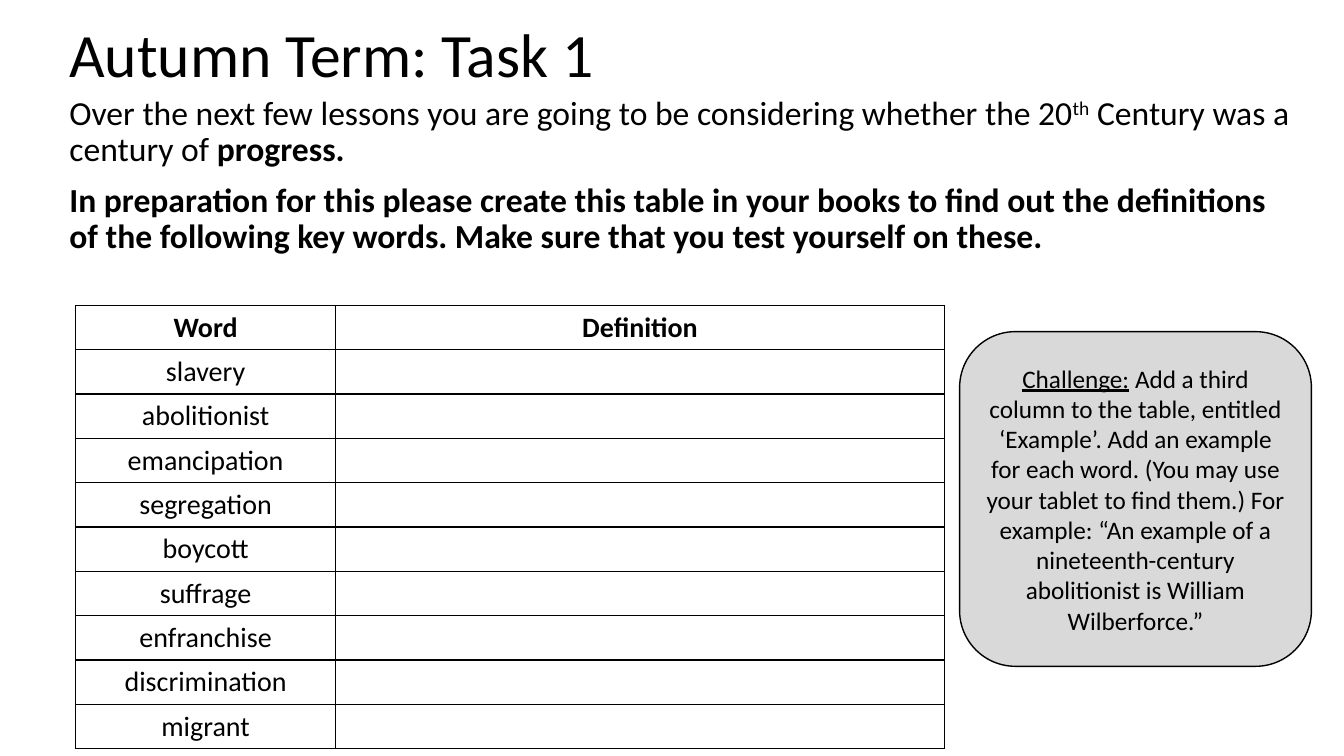
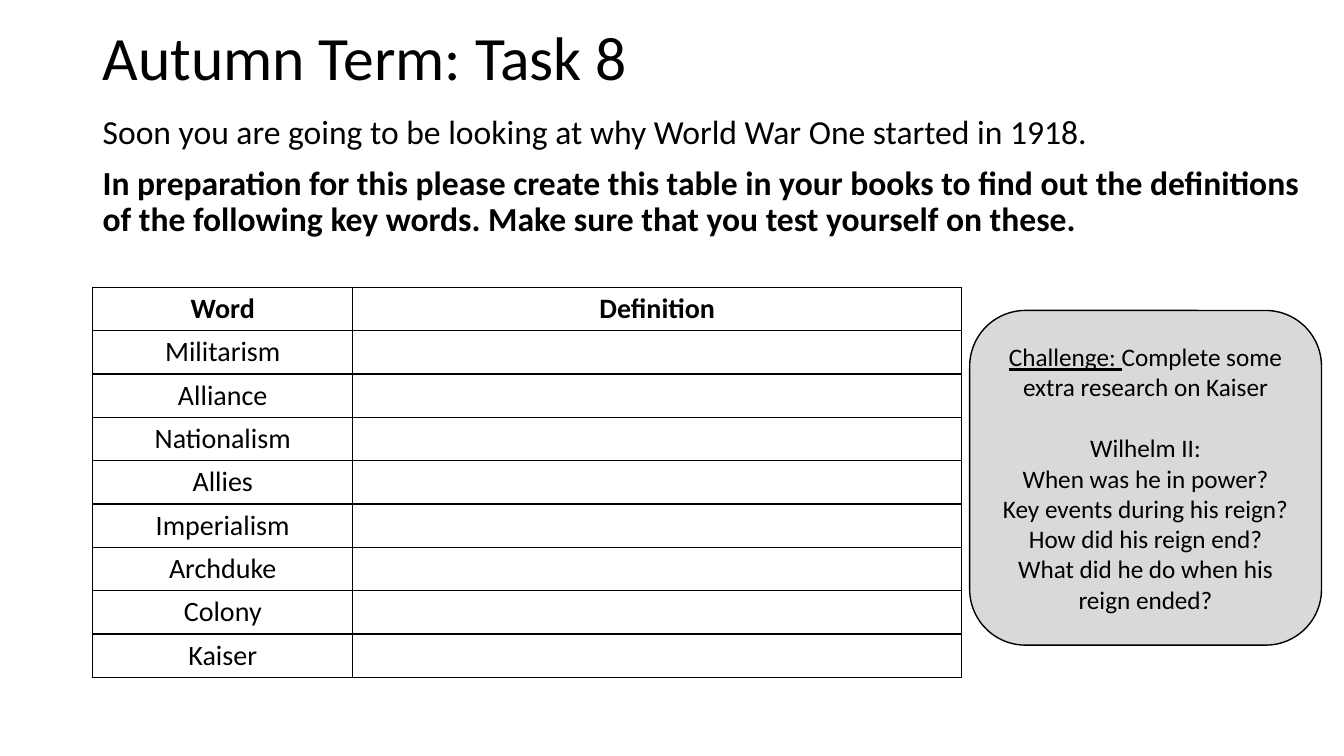
from lxml.etree import SubElement as Sub
from pptx import Presentation
from pptx.dml.color import RGBColor as Rgb
from pptx.enum.shapes import MSO_SHAPE as Shape
from pptx.enum.text import MSO_ANCHOR as Anchor, PP_ALIGN as Align
from pptx.oxml.ns import qn
from pptx.util import Emu, Inches, Pt

# Shared style
INK = {"text": "000000", "line": "000000", "card": "D9D9D9"}
FONT = "Calibri"
HEAD = ["Word", "Definition"]
COLS = [2.58, 6.04]
TASK = ("In preparation for this please create this table in your books to find "
        "out the definitions of the following key words. Make sure that you "
        "test yourself on these.")

# Content: a paragraph is a list of (text, marks) runs
# Marks: b = bold, u = underline, ^ = superscript
TASKS = [
    dict(
        title="Autumn Term: Task 1", title_at=(0.59, 0.05, 11.5, 1.05),
        intro=[("Over the next few lessons you are going to be considering "
                "whether the 20", ""), ("th", "^"),
               (" Century was a century of ", ""), ("progress.", "b")],
        intro_at=(0.59, 0.91, 12.42, 1.7),
        words=["slavery", "abolitionist", "emancipation", "segregation", "boycott",
               "suffrage", "enfranchise", "discrimination", "migrant"],
        grid_at=(0.75, 3.03), row=0.44,
        card=[[("Challenge:", "u"),
               (" Add a third column to the table, entitled ‘Example’. Add an "
                "example for each word. (You may use your tablet to find them.) "
                "For example: “An example of a nineteenth-century abolitionist "
                "is William Wilberforce.”", "")]],
        card_at=(9.52, 3.29, 3.49, 3.32), gaps={},
    ),
    dict(
        title="Autumn Term: Task 8", title_at=(0.92, 0.08, 11.5, 1.05),
        intro=[("Soon you are going to be looking at why World War One "
                "started in 1918.", "")],
        intro_at=(0.92, 1.1, 12.1, 1.33),
        words=["Militarism", "Alliance", "Nationalism", "Allies", "Imperialism",
               "Archduke", "Colony", "Kaiser"],
        grid_at=(0.92, 2.85), row=0.43,
        card=[[("Challenge: ", "u"), ("Complete some extra research on Kaiser", "")],
              [("Wilhelm II:", "")],
              [("When was he in power?", "")],
              [("Key events during his reign?", "")],
              [("How did his reign end?", "")],
              [("What did he do when his reign ended?", "")]],
        card_at=(9.62, 3.08, 3.49, 3.32), gaps={1: 22},
    ),
]


def add_run(para, text, size, marks=""):
    run = para.add_run()
    run.text = text
    font = run.font
    font.name, font.size = FONT, Pt(size)
    font.color.rgb = Rgb.from_string(INK["text"])
    font.bold = "b" in marks
    font.underline = "u" in marks
    if "^" in marks:
        run._r.get_or_add_rPr().set("baseline", "30000")


def fill_text(frame, paras, size, align=Align.LEFT, space=None, gaps=None):
    """Write paragraphs; gaps maps a paragraph's index to its space before."""
    frame.word_wrap = True
    for i, runs in enumerate(paras):
        para = frame.add_paragraph() if i else frame.paragraphs[0]
        para.alignment = align
        para.line_spacing = space
        if gaps and i in gaps:
            para.space_before = Pt(gaps[i])
        for text, marks in runs:
            add_run(para, text, size, marks)


def add_text(slide, at, paras, size, anchor=Anchor.TOP, gaps=None):
    frame = slide.shapes.add_textbox(*map(Inches, at)).text_frame
    frame.vertical_anchor = anchor
    fill_text(frame, paras, size, space=0.9, gaps=gaps)


def add_edges(cell):
    props = cell._tc.get_or_add_tcPr()
    for side in ("lnL", "lnR", "lnT", "lnB"):
        line = Sub(props, qn(f"a:{side}"), w=str(Pt(1)))
        fill = Sub(line, qn("a:solidFill"))
        Sub(fill, qn("a:srgbClr"), val=INK["line"])


def add_grid(slide, at, words, row):
    rows = [HEAD] + [[word, ""] for word in words]
    size = (sum(COLS), row * len(rows))
    table = slide.shapes.add_table(len(rows), len(COLS),
                                   *map(Inches, at + size)).table
    table.first_row = table.horz_banding = False
    for col, width in zip(table.columns, COLS):
        col.width = Inches(width)
    for r, texts in enumerate(rows):
        table.rows[r].height = Inches(row)
        for c, text in enumerate(texts):
            cell = table.cell(r, c)
            add_edges(cell)
            cell.fill.background()
            cell.margin_top = cell.margin_bottom = Inches(0.04)
            cell.vertical_anchor = Anchor.MIDDLE
            if text:
                marks = "" if r else "b"
                fill_text(cell.text_frame, [[(text, marks)]], 20, Align.CENTER)


def add_card(slide, at, paras, gaps):
    card = slide.shapes.add_shape(Shape.ROUNDED_RECTANGLE, *map(Inches, at))
    card.shadow.inherit = False
    card.fill.solid()
    card.fill.fore_color.rgb = Rgb.from_string(INK["card"])
    card.line.color.rgb = Rgb.from_string(INK["line"])
    card.line.width = Pt(1)
    card.text_frame.vertical_anchor = Anchor.MIDDLE
    fill_text(card.text_frame, paras, 18, Align.CENTER, gaps=gaps)


def add_task(deck, task):
    slide = deck.slides.add_slide(deck.slide_layouts[6])
    add_text(slide, task["title_at"], [[(task["title"], "")]], 44, Anchor.MIDDLE)
    add_text(slide, task["intro_at"], [task["intro"], [(TASK, "b")]], 24,
             gaps={0: 10, 1: 10})
    add_grid(slide, task["grid_at"], task["words"], task["row"])
    add_card(slide, task["card_at"], task["card"], task["gaps"])


def main():
    deck = Presentation()
    deck.slide_width, deck.slide_height = Emu(12192000), Inches(7.5)
    for task in TASKS:
        add_task(deck, task)
    deck.save("out.pptx")


if __name__ == "__main__":
    main()
